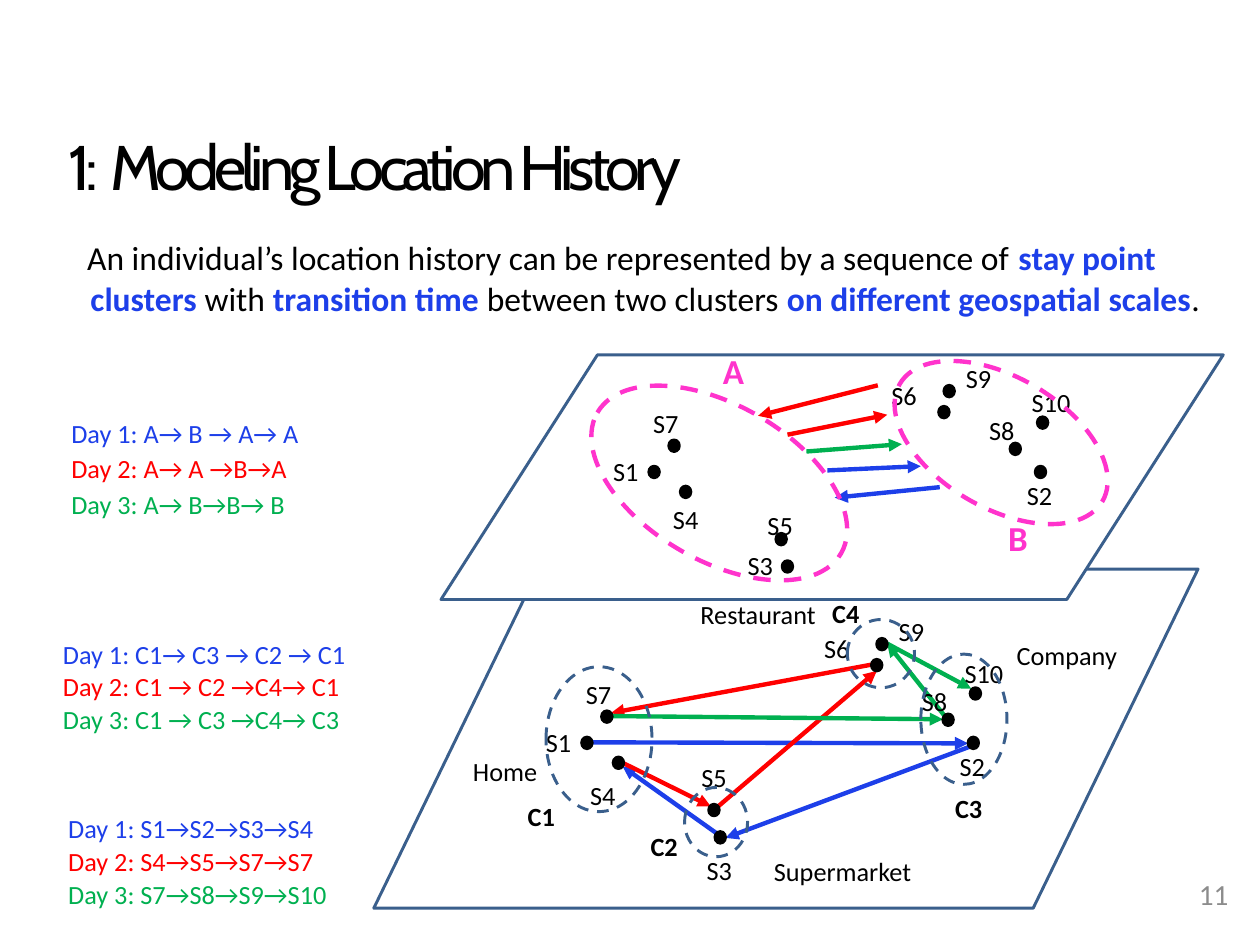
from lxml.etree import SubElement
from pptx import Presentation
from pptx.dml.color import RGBColor
from pptx.enum.dml import MSO_LINE
from pptx.enum.shapes import MSO_CONNECTOR, MSO_SHAPE
from pptx.enum.text import MSO_ANCHOR as ANCHOR, PP_ALIGN as ALIGN
from pptx.oxml.ns import qn
from pptx.util import Emu, Pt

PX = 9144
COLORS = {
    "black": "000000", "white": "FFFFFF", "gray": "8C8C8C", "steel": "3A5F8C",
    "blue": "1D3FE9", "red": "FF0000", "green": "00B050", "pink": "FF33CC",
}
DAY_COLORS = ("blue", "red", "green")

HISTORIES = [
    (68, 396, 32, 34, ["Day 1: A→ B → A→ A", "Day 2: A→ A →B→A", "Day 3: A→ B→B→ B"]),
    (60, 608, 29, 31, ["Day 1: C1→ C3 → C2 → C1", "Day 2: C1 → C2 →C4→ C1",
                       "Day 3: C1 → C3 →C4→ C3"]),
    (65, 765, 48, 31, ["Day 1: S1→S2→S3→S4", "Day 2: S4→S5→S7→S7",
                       "Day 3: S7→S8→S9→S10"]),
]
STAY_POINTS = {
    "S1": (554, 702, 503, 684), "S2": (922, 702, 897, 707),
    "S3": (681, 792, 656, 806), "S4": (584, 721, 545, 735),
    "S5": (675, 766, 651, 717), "S6": (830, 628, 768, 595),
    "S7": (573, 677, 541, 638), "S8": (898, 680, 861, 645),
    "S9": (835, 608, 839, 578), "S10": (924, 655, 908, 618),
}
UPPER_SHIFT = (64, -258)
UPPER_DROPS = {"S6": 17, "S9": 17}
UPPER_LABEL_MOVES = {"S3": (-25, -32), "S4": (15, -5), "S5": (-1, 18)}
LOWER_TRIPS = [
    ("blue", 564, 707, 922, 708), ("blue", 924, 711, 691, 798),
    ("blue", 683, 794, 593, 730), ("red", 594, 727, 677, 768),
    ("red", 684, 768, 835, 639), ("red", 830, 633, 582, 679),
    ("green", 582, 682, 898, 685), ("green", 899, 681, 845, 613),
    ("green", 845, 613, 925, 656),
]
UPPER_TRIPS = [
    ("blue", 788, 448, 877, 444), ("blue", 895, 464, 795, 474),
    ("red", 750, 414, 845, 395), ("red", 836, 367, 722, 396),
    ("green", 768, 430, 859, 423),
]
CLUSTERS = [
    ("C1", (520, 635, 101, 138), (478, 755)), ("C2", (652, 750, 60, 66), (595, 783)),
    ("C3", (877, 623, 82, 124), (885, 747)), ("C4", (807, 590, 64, 65), (768, 561)),
]
REGIONS = [
    ("A", (551, 386, 268, 148), (661, 318)), ("B", (842, 359, 223, 125), (932, 477)),
]
PLACES = [
    ("Home", 432, 712, 98), ("Supermarket", 718, 807, 169),
    ("Company", 952, 601, 128), ("Restaurant", 644, 562, 156),
]


def emu(*lengths):
    """Turn px lengths into EMU."""
    return [Emu(n * PX) for n in lengths]


def rgb(name):
    """Look up a named colour."""
    return RGBColor.from_string(COLORS[name])


def text(s, box, runs, size=18, color="black", bold=False, font="Calibri",
         align=ALIGN.CENTER, anchor=ANCHOR.MIDDLE, inset=(0, 0), hang=0,
         spacing=None, track=None):
    """Add a text box holding one paragraph of formatted runs."""
    tf = s.shapes.add_textbox(*emu(*box)).text_frame
    tf.word_wrap = True
    tf.vertical_anchor = anchor
    tf.margin_left = tf.margin_right = Emu(inset[0] * PX)
    tf.margin_top = tf.margin_bottom = Emu(inset[1] * PX)
    p = tf.paragraphs[0]
    p.alignment = align
    if spacing:
        p.line_spacing = spacing
    if hang:
        pPr = p._p.get_or_add_pPr()
        pPr.set("marL", str(hang * PX))
        pPr.set("indent", str(-hang * PX))
    for words, style in [(runs, {})] if isinstance(runs, str) else runs:
        r = p.add_run()
        r.text = words
        r.font.name = font
        r.font.size = Pt(style.get("size", size))
        r.font.bold = style.get("bold", bold)
        r.font.color.rgb = rgb(style.get("color", color))
        if track:
            r._r.get_or_add_rPr().set("spc", str(track))


def outline(s, kind, box, line, width=2, fill=None, dashed=False, turn=0):
    """Add a preset shape with an outline and an optional fill."""
    sp = s.shapes.add_shape(kind, *emu(*box))
    sp.shadow.inherit = False
    sp.rotation = turn
    if fill:
        sp.fill.solid()
        sp.fill.fore_color.rgb = rgb(fill)
    else:
        sp.fill.background()
    sp.line.color.rgb = rgb(line)
    sp.line.width = Pt(width)
    if dashed:
        sp.line.dash_style = MSO_LINE.DASH


def trip(s, color, *ends):
    """Add an arrow between two stay points or clusters."""
    c = s.shapes.add_connector(MSO_CONNECTOR.STRAIGHT, *emu(*ends))
    c.line.color.rgb = rgb(color)
    c.line.width = Pt(3)
    SubElement(c.line._get_or_add_ln(), qn("a:tailEnd"), type="triangle")
    SubElement(c._element.spPr, qn("a:effectLst"))


def stay_points(s, shift=(0, 0), drops={}, label_moves={}):
    """Add the labelled dots of one layer."""
    for name, (x, y, label_x, label_y) in STAY_POINTS.items():
        dx, dy = shift[0], shift[1] + drops.get(name, 0)
        move_x, move_y = label_moves.get(name, (0, 0))
        outline(s, MSO_SHAPE.OVAL, (x + dx, y + dy, 10, 11), "black", fill="black")
        text(s, (label_x + dx + move_x, label_y + dy + move_y, 58, 45), name)


def history(s, x, y, height, pitch, days):
    """Add one coloured line of text for each day."""
    for i, (day, color) in enumerate(zip(days, DAY_COLORS)):
        text(s, (x, y + i * pitch, 290, height), day, color=color, align=ALIGN.LEFT)


def lower_layer(s):
    """Add the fine layer with clusters C1 to C4."""
    outline(s, MSO_SHAPE.FLOWCHART_DATA, (356, 542, 785, 323), "steel")
    for trip_data in LOWER_TRIPS:
        trip(s, *trip_data)
    stay_points(s)
    for name, x, y, width in PLACES:
        text(s, (x, y, width, 45), name)
    for name, box, label in CLUSTERS:
        outline(s, MSO_SHAPE.OVAL, box, "steel", dashed=True)
        text(s, (*label, 75, 45), name, bold=True)


def upper_layer(s):
    """Add the coarse layer with regions A and B."""
    outline(s, MSO_SHAPE.FLOWCHART_DATA, (420, 338, 745, 233), "steel", fill="white")
    for trip_data in UPPER_TRIPS:
        trip(s, *trip_data)
    stay_points(s, UPPER_SHIFT, UPPER_DROPS, UPPER_LABEL_MOVES)
    for name, box, label in REGIONS:
        outline(s, MSO_SHAPE.OVAL, box, "pink", width=3, dashed=True, turn=30)
        text(s, (*label, 75, 70), name, size=24, color="pink", bold=True)


def main():
    """Build the slide and save it."""
    prs = Presentation()
    prs.slide_width, prs.slide_height = emu(1200, 900)
    s = prs.slides.add_slide(prs.slide_layouts[6])
    key = {"color": "blue", "bold": True}
    text(s, (53, 126, 1100, 73),
         [("1:", {}), (" ", {"size": 36}), ("Modeling Location History", {})],
         size=43.2, font="Cabin", align=ALIGN.LEFT, inset=(12, 6), spacing=0.9, track=-360)
    text(s, (23, 220, 1138, 118), [
        ("An individual’s location history can be represented by a sequence of ", {}),
        ("stay point clusters ", key), ("with ", {}), ("transition time ", key),
        ("between two clusters ", {}), ("on different geospatial scales", key), (".", {}),
    ], size=23, anchor=ANCHOR.TOP, inset=(12, 6), hang=45)
    text(s, (932, 821, 250, 60), "11", size=20, color="gray", align=ALIGN.RIGHT,
         inset=(12, 6))
    for lines in HISTORIES:
        history(s, *lines)
    lower_layer(s)
    upper_layer(s)
    prs.save("out.pptx")


if __name__ == "__main__":
    main()
